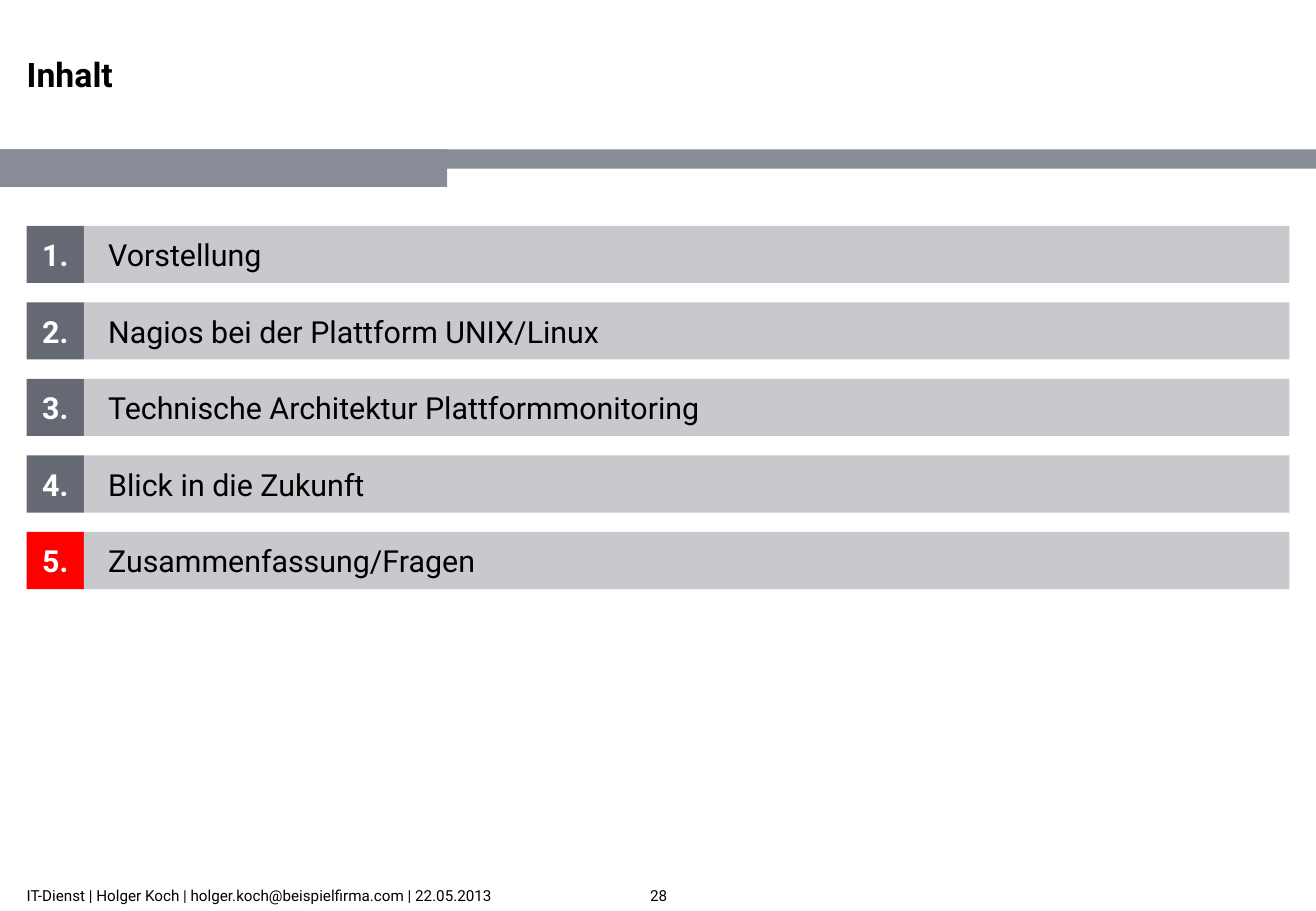
import dataclasses

import pptx
import pptx.dml.color
import pptx.enum.shapes
import pptx.enum.text
import pptx.util

Inches = pptx.util.Inches
Align = pptx.enum.text.PP_ALIGN
Anchor = pptx.enum.text.MSO_ANCHOR


@dataclasses.dataclass(frozen=True)
class Theme:
    font: str = "Roboto"
    title_size: int = 20
    item_size: int = 18
    footer_size: int = 9
    text: str = "000000"
    number_text: str = "FFFFFF"
    band: str = "878C96"
    number: str = "646973"
    current: str = "FF0000"
    item: str = "C8C8CD"


THEME = Theme()
MARGIN = 0.22
PAGE_WIDTH = 10.83
ROW_TOP, ROW_HEIGHT, ROW_STEP = 1.86, 0.47, 0.63
CURRENT_TOPIC = 5
TOPICS = [
    "Vorstellung",
    "Nagios bei der Plattform UNIX/Linux",
    "Technische Architektur Plattformmonitoring",
    "Blick in die Zukunft",
    "Zusammenfassung/Fragen",
]


def set_all(target, values):
    for name, value in values.items():
        setattr(target, name, value)


def write(shape, text, size, color=THEME.text, bold=False, align=Align.LEFT,
          anchor=Anchor.MIDDLE, inset=0):
    frame = shape.text_frame
    set_all(frame, {
        "text": text,
        "word_wrap": True,
        "auto_size": pptx.enum.text.MSO_AUTO_SIZE.NONE,
        "vertical_anchor": anchor,
        "margin_left": Inches(inset),
        "margin_right": 0,
        "margin_top": 0,
        "margin_bottom": 0,
    })
    para = frame.paragraphs[0]
    para.alignment = align
    set_all(para.font, {"name": THEME.font, "size": pptx.util.Pt(size), "bold": bold})
    para.font.color.rgb = pptx.dml.color.RGBColor.from_string(color)


def add_block(page, left, top, width, height, color):
    block = page.shapes.add_shape(
        pptx.enum.shapes.MSO_SHAPE.RECTANGLE,
        Inches(left), Inches(top), Inches(width), Inches(height))
    block.shadow.inherit = False
    block.fill.solid()
    block.fill.fore_color.rgb = pptx.dml.color.RGBColor.from_string(color)
    block.line.fill.background()
    return block


def add_title(page, text):
    title = page.shapes.title
    set_all(title, {"left": Inches(MARGIN), "top": Inches(0.44),
                    "width": Inches(7.56), "height": Inches(0.71)})
    write(title, text, THEME.title_size, bold=True, anchor=Anchor.TOP)


def add_topic(page, number, topic):
    top = ROW_TOP + (number - 1) * ROW_STEP
    color = THEME.current if number == CURRENT_TOPIC else THEME.number
    square = add_block(page, MARGIN, top, ROW_HEIGHT, ROW_HEIGHT, color)
    write(square, f"{number}.", THEME.item_size, THEME.number_text, True, Align.CENTER)
    bar_left = MARGIN + ROW_HEIGHT
    bar = add_block(page, bar_left, top, PAGE_WIDTH - MARGIN - bar_left, ROW_HEIGHT, THEME.item)
    write(bar, topic, THEME.item_size, inset=0.2)


def add_footer_text(page, left, width, text, align=Align.LEFT):
    box = page.shapes.add_textbox(Inches(left), Inches(7.32), Inches(width), Inches(0.1))
    write(box, text, THEME.footer_size, align=align)


def main():
    deck = pptx.Presentation()
    set_all(deck, {"slide_width": Inches(PAGE_WIDTH), "slide_height": Inches(7.5)})
    page = deck.slides.add_slide(deck.slide_layouts.get_by_name("Title Only"))
    add_title(page, "Inhalt")
    for width, height in [(PAGE_WIDTH, 0.16), (3.68, 0.31)]:
        add_block(page, 0, 1.23, width, height, THEME.band)
    for number, topic in enumerate(TOPICS, 1):
        add_topic(page, number, topic)
    add_footer_text(page, MARGIN, 4.06,
                    "IT-Dienst | Holger Koch | holger.koch@beispielfirma.com | 22.05.2013")
    add_footer_text(page, 4.38, 2.08, "28", Align.CENTER)
    deck.save("out.pptx")


if __name__ == "__main__":
    main()
